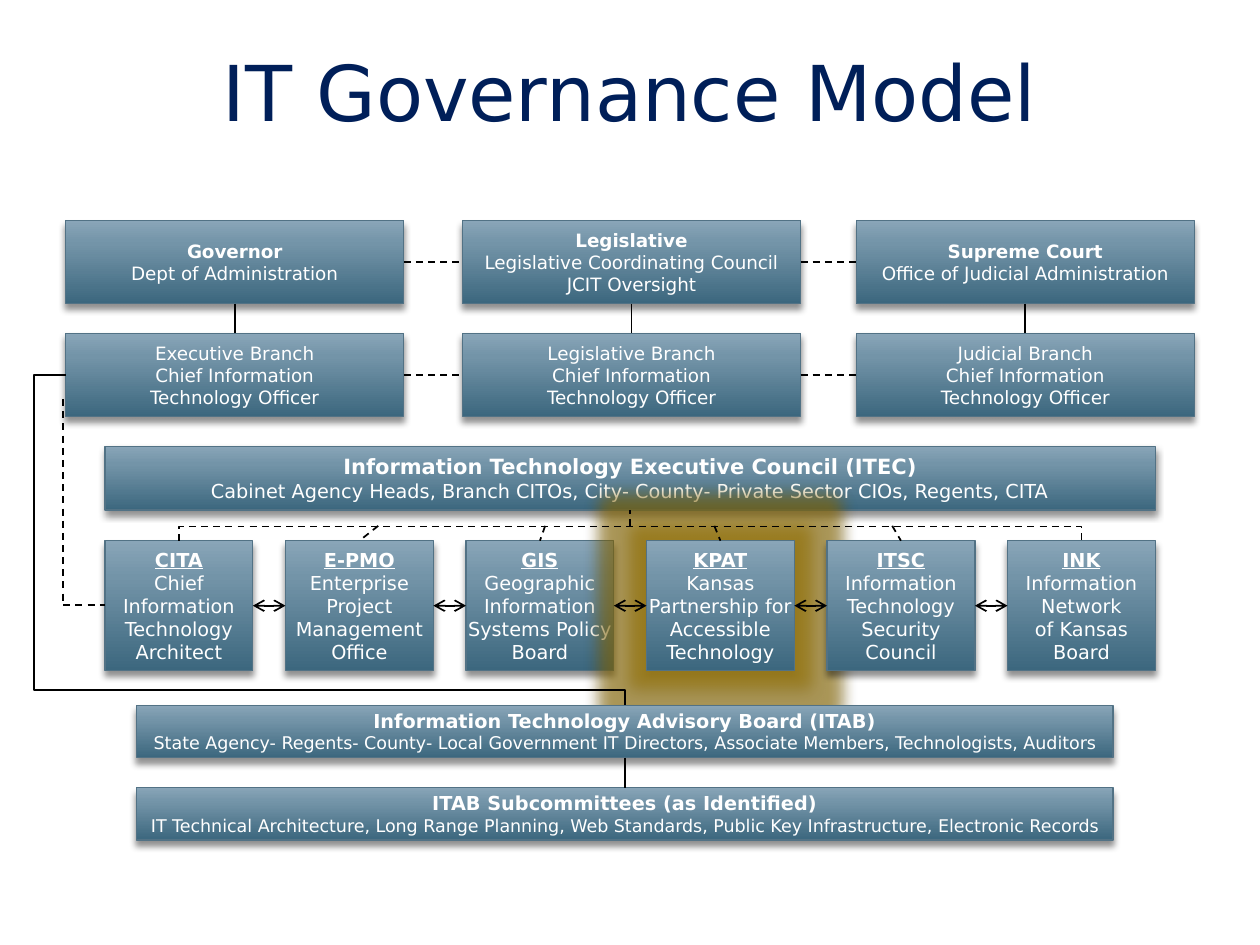
from lxml import etree
from pptx import Presentation, util as u
from pptx.dml.color import RGBColor
from pptx.enum import dml, shapes, text
from pptx.oxml.ns import qn

Pt = u.Pt
FONT = "DejaVu Sans"
COLORS = {"line": "527285", "label": "FFFFFF", "link": "000000", "shadow": "000000", "glow": "967200"}
PANEL_STOPS = [(0, "3C677E"), (72, "7394A8"), (100, "89A5B8")]
TITLE_STOPS = [(0, "00163E"), (50, "001F59"), (100, "002569")]

BRANCHES = [
    (37.5, ["Governor", "Dept of Administration"], "Executive Branch"),
    (264.25, ["Legislative", "Legislative Coordinating Council", "JCIT Oversight"], "Legislative Branch"),
    (489.25, ["Supreme Court", "Office of Judicial Administration"], "Judicial Branch"),
]
COMMITTEES = [
    ["CITA", "Chief", "Information\nTechnology", "Architect"],
    ["E-PMO", "Enterprise", "Project", "Management", "Office"],
    ["GIS", "Geographic", "Information", "Systems Policy", "Board"],
    ["KPAT", "Kansas", "Partnership for", "Accessible", "Technology"],
    ["ITSC", "Information", "Technology", "Security", "Council"],
    ["INK", "Information\nNetwork", "of Kansas", "Board"],
]
COUNCIL = [
    "Information Technology Executive Council (ITEC)",
    "Cabinet Agency Heads, Branch CITOs, City- County- Private Sector CIOs, Regents, CITA",
]
ADVISORY = [
    ["Information Technology Advisory Board (ITAB)",
     "State Agency- Regents- County- Local Government IT Directors, Associate Members, "
     "Technologists, Auditors"],
    ["ITAB Subcommittees (as Identified)",
     "IT Technical Architecture, Long Range Planning, Web Standards, Public Key Infrastructure, "
     "Electronic Records"],
]


def add_tag(parent, tag, **attributes):
    """Append a drawing element with the given attributes."""
    return etree.SubElement(parent, qn(tag), {key: str(value) for key, value in attributes.items()})


def add_color(parent, color, alpha):
    """Append a colour with an opacity in percent."""
    add_tag(add_tag(parent, "a:srgbClr", val=color), "a:alpha", val=alpha * 1000)


def paint_gradient(fill, owner, stops):
    """Fill from bottom to top with the given colour stops."""
    fill.gradient()
    fill.gradient_angle = 90
    ramp = owner.find(".//" + qn("a:gsLst"))
    for old_stop in list(ramp):
        ramp.remove(old_stop)
    for position, color in stops:
        add_tag(add_tag(ramp, "a:gs", pos=position * 1000), "a:srgbClr", val=color)


def add_panel(slide, box, lines, head_size, body_size, bold=True, underline=False, glow=False):
    """Add a shaded panel with a heading line and body lines."""
    panel = slide.shapes.add_shape(shapes.MSO_SHAPE.RECTANGLE, *map(Pt, box))
    paint_gradient(panel.fill, panel._element.spPr, PANEL_STOPS)
    panel.line.color.rgb = RGBColor.from_string(COLORS["line"])
    panel.line.width = Pt(0.75)
    panel.shadow.inherit = False
    effects = panel._element.spPr.find(qn("a:effectLst"))
    if glow:
        add_color(add_tag(effects, "a:glow", rad=Pt(18)), COLORS["glow"], 55)
    shadow = add_tag(effects, "a:outerShdw", blurRad=Pt(4), dist=Pt(3), dir=5400000, rotWithShape=0)
    add_color(shadow, COLORS["shadow"], 43)

    frame = panel.text_frame
    frame.word_wrap = False
    frame.vertical_anchor = text.MSO_ANCHOR.MIDDLE
    for index, line in enumerate(lines):
        paragraph = frame.paragraphs[0] if index == 0 else frame.add_paragraph()
        paragraph.text = line
        paragraph.alignment = text.PP_ALIGN.CENTER
        font = paragraph.font
        font.name = FONT
        font.size = Pt(body_size if index else head_size)
        font.bold = bold and index == 0
        font.underline = underline and index == 0
        font.color.rgb = RGBColor.from_string(COLORS["label"])


def add_link(slide, start, end, dashed=False, arrows=False, bend=None, adjust=(), rotation=0):
    """Add a straight or bent connector between two points."""
    kind = shapes.MSO_CONNECTOR.ELBOW if bend else shapes.MSO_CONNECTOR.STRAIGHT
    link = slide.shapes.add_connector(kind, *map(Pt, (*start, *end)))
    link.rotation = rotation
    link.line.color.rgb = RGBColor.from_string(COLORS["link"])
    link.line.width = Pt(1)
    properties = link._element.spPr
    if dashed:
        link.line.dash_style = dml.MSO_LINE.DASH
    if arrows:
        for tip in ("a:headEnd", "a:tailEnd"):
            add_tag(properties.find(qn("a:ln")), tip, type="arrow")
    if bend:
        geometry = properties.find(qn("a:prstGeom"))
        geometry.set("prst", bend)
        guides = geometry.find(qn("a:avLst"))
        for number, value in enumerate(adjust, 1):
            add_tag(guides, "a:gd", name=f"adj{number}", fmla=f"val {value}")
    add_tag(properties, "a:effectLst")


def add_title(slide, box, wording):
    """Place the slide title."""
    title = slide.shapes.title
    title.left, title.top, title.width, title.height = map(Pt, box)
    frame = title.text_frame
    frame.text = wording
    frame.vertical_anchor = text.MSO_ANCHOR.TOP
    heading = frame.paragraphs[0]
    heading.alignment = text.PP_ALIGN.CENTER
    font = heading.runs[0].font
    font.name, font.size = FONT, Pt(44)
    paint_gradient(font.fill, heading.runs[0]._r, TITLE_STOPS)


def add_branches(slide, box):
    """Place the three branches, each above its technology officer."""
    left, top, width, height = box
    panel_width, panel_height = 193.25, 47.5
    lower = top + height - panel_height
    offsets = [x - BRANCHES[0][0] for x, _, _ in BRANCHES]
    for offset, (_, body, branch) in zip(offsets, BRANCHES):
        x = left + offset
        officer = [branch, "Chief Information", "Technology Officer"]
        add_panel(slide, (x, top, panel_width, panel_height), body, 10.5, 10.5)
        add_panel(slide, (x, lower, panel_width, panel_height), officer, 10.5, 10.5, bold=False)
        middle = x + panel_width / 2
        add_link(slide, (middle, top + panel_height), (middle, lower))
    for before, after in zip(offsets, offsets[1:]):
        for y in (top + panel_height / 2, lower + panel_height / 2):
            add_link(slide, (left + before + panel_width, y), (left + after, y), dashed=True)


def add_committees(slide, box):
    """Place the council with its committees and their links."""
    left, top, width, height = box
    council_height, panel_width, panel_height = 36.5, 84.5, 74.25
    row = top + height - panel_height
    bus = row - 8.5
    pitch = (width - panel_width) / (len(COMMITTEES) - 1)
    add_panel(slide, (left, top, width, council_height), COUNCIL, 12, 11)
    for index, lines in enumerate(COMMITTEES):
        panel = (left + index * pitch, row, panel_width, panel_height)
        add_panel(slide, panel, lines, 11, 11, underline=True, glow=lines[0] == "KPAT")

    center = left + width / 2
    half_span, sliver = (width - panel_width) / 2, 0.13
    add_link(slide, (center + sliver / 2, row + half_span), (center - sliver / 2, row - half_span),
             dashed=True, bend="bentConnector3", adjust=[5800000], rotation=90)
    add_link(slide, (center, bus), (center, top + council_height), dashed=True)
    for index, lean in enumerate((10.75, 3, -3.5, -5), 1):
        x = left + index * pitch + panel_width / 2
        add_link(slide, (x + lean, bus), (x, row), dashed=True)
    for index in range(len(COMMITTEES) - 1):
        x, y = left + index * pitch, row + panel_height / 2
        add_link(slide, (x + panel_width, y), (x + pitch, y), arrows=True)


def add_advisory(slide, box):
    """Place the advisory board above its subcommittees."""
    left, top, width, height = box
    panel_height = 30
    lower = top + height - panel_height
    for y, lines in zip((top, lower), ADVISORY):
        add_panel(slide, (left, y, width, panel_height), lines, 11, 10)
    middle = left + width / 2
    add_link(slide, (middle, top + panel_height), (middle, lower))


def add_executive_links(slide):
    """Link the executive officer to the advisory board and to CITA."""
    add_link(slide, (37.5, 214.5), (357, 403), bend="bentConnector4", adjust=[-5600, 95500])
    add_link(slide, (106.75, 275), (-11, 299), dashed=True, bend="bentConnector2", rotation=270)


def main():
    """Build and save the governance slide."""
    deck = Presentation()
    deck.slide_width, deck.slide_height = Pt(720), Pt(540)
    slide = deck.slides.add_slide(deck.slide_layouts[5])
    add_title(slide, (36, 21.6, 648, 90), "IT Governance Model")
    add_branches(slide, (37.5, 126, 645, 112))
    add_committees(slide, (60, 255, 600.25, 128.25))
    add_advisory(slide, (78, 403, 558, 77))
    add_executive_links(slide)
    deck.save("out.pptx")


if __name__ == "__main__":
    main()
